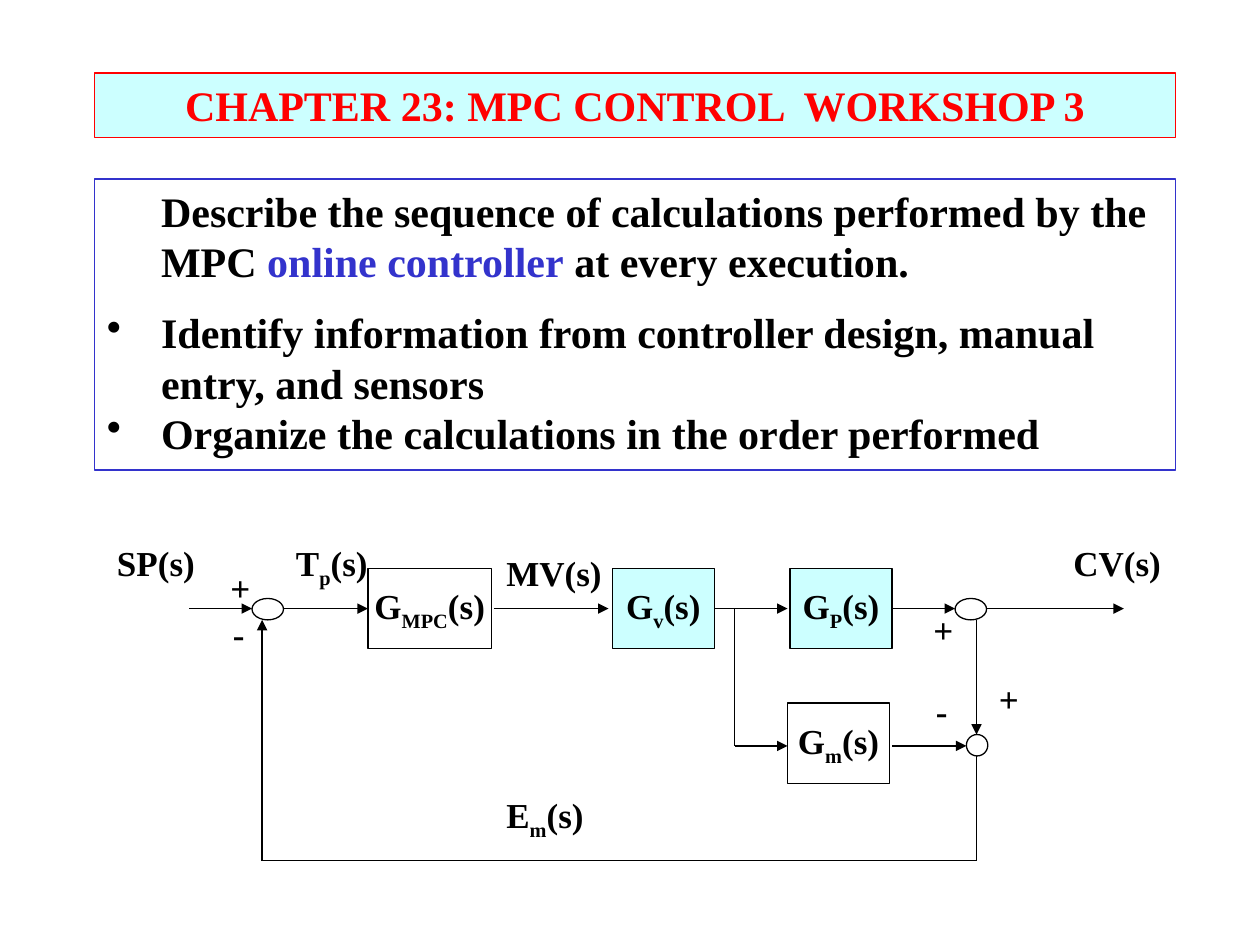
from dataclasses import dataclass
from typing import Optional

from lxml.etree import SubElement
from pptx import Presentation
from pptx.dml.color import RGBColor
from pptx.enum.shapes import MSO_CONNECTOR as Link, MSO_SHAPE as Kind
from pptx.enum.text import MSO_ANCHOR as Anchor, PP_ALIGN as Align
from pptx.oxml.ns import qn
from pptx.util import Inches, Pt

BLACK = RGBColor(0x00, 0x00, 0x00)
RED = RGBColor(0xFF, 0x00, 0x00)
BLUE = RGBColor(0x33, 0x33, 0xCC)
CYAN = RGBColor(0xCC, 0xFF, 0xFF)
FONT = "Times New Roman"
LEFT, WIDE = 0.75, 8.58
MAIN, MODEL, BACK = 4.83, 5.92, 6.83  # heights of the three signal rows
HIGH = 0.64


@dataclass
class Block:
    text: str
    x: float
    y: float
    w: float = 0.81
    fill: Optional[RGBColor] = None


@dataclass
class Node:
    x: float
    y: float
    w: float
    h: float = 0.17


@dataclass
class Label:
    text: str
    x: float
    y: float
    w: float
    wrap: bool = True


@dataclass
class Wire:
    x1: float
    y1: float
    x2: float
    y2: float
    arrow: bool = True
    start: Optional[str] = None  # block whose right side it leaves
    stop: Optional[str] = None   # block whose left side it enters


BLOCKS = [
    Block("G_MPC_(s)", 2.92, MAIN - HIGH / 2, 0.98),
    Block("G_v_(s)", 4.86, MAIN - HIGH / 2, fill=CYAN),
    Block("G_P_(s)", 6.27, MAIN - HIGH / 2, fill=CYAN),
    Block("G_m_(s)", 6.25, 5.58),
]
NODES = [Node(2, 4.75, 0.25), Node(7.58, 4.75, 0.25), Node(7.67, 5.83, 0.17)]
WIRES = [
    Wire(1.5, MAIN, 2, MAIN),
    Wire(2.25, MAIN, 2.92, MAIN, stop="G_MPC_(s)"),
    Wire(3.92, MAIN, 4.83, MAIN),
    Wire(5.67, MAIN, 6.25, MAIN, start="G_v_(s)"),
    Wire(7.08, MAIN, 7.58, MAIN, start="G_P_(s)"),
    Wire(7.83, MAIN, 8.92, MAIN),
    Wire(5.83, MAIN, 5.83, MODEL, arrow=False),
    Wire(5.83, MODEL, 6.25, MODEL),
    Wire(7.08, MODEL, 7.67, MODEL),
    Wire(7.75, 4.92, 7.75, 5.83),
    Wire(7.75, 6, 7.75, BACK, arrow=False),
    Wire(7.75, BACK, 2.08, BACK, arrow=False),
    Wire(2.08, BACK, 2.08, 4.92),
]
LABELS = [
    Label("SP(s)", 0.83, 4.25, 0.92),
    Label("T_p_(s)", 2.25, 4.25, 1.08),
    Label("MV(s)", 3.92, 4.33, 1.08),
    Label("CV(s)", 8.42, 4.25, 0.92),
    Label("E_m_(s)", 3.92, 6.25, 1.08),
    Label("+", 1.73, 4.45, 0.36, False),
    Label("-", 1.75, 4.81, 0.29, False),
    Label("+", 7.31, 4.78, 0.36, False),
    Label("-", 7.33, 5.42, 0.29, False),
    Label("+", 7.83, 5.33, 0.36, False),
]


def style(run, size: int, color: RGBColor = BLACK) -> None:
    font = run.font
    font.name, font.size, font.bold = FONT, Pt(size), True
    font.color.rgb = color


def write(par, text: str) -> None:
    """Write a signal name; the part between underscores is a subscript."""
    for i, part in enumerate(text.split("_")):
        run = par.add_run()
        run.text = part
        style(run, 20)
        if i % 2:
            run.font._element.set("baseline", "-25000")


def paint(shape, fill: Optional[RGBColor], line: RGBColor) -> None:
    if fill is None:
        shape.fill.background()
    else:
        shape.fill.solid()
        shape.fill.fore_color.rgb = fill
    shape.line.color.rgb = line
    shape.line.width = Pt(0.75)


def add_shape(slide, kind, x: float, y: float, w: float, h: float,
              fill: Optional[RGBColor] = None, line: RGBColor = BLACK):
    shape = slide.shapes.add_shape(kind, Inches(x), Inches(y), Inches(w), Inches(h))
    shape.shadow.inherit = False
    paint(shape, fill, line)
    return shape


def add_block(slide, block: Block):
    shape = add_shape(slide, Kind.RECTANGLE, block.x, block.y, block.w, HIGH, block.fill)
    frame = shape.text_frame
    frame.word_wrap = False
    frame.vertical_anchor = Anchor.MIDDLE
    par = frame.paragraphs[0]
    par.alignment = Align.CENTER
    write(par, block.text)
    return shape


def add_label(slide, label: Label) -> None:
    box = slide.shapes.add_textbox(
        Inches(label.x), Inches(label.y), Inches(label.w), Inches(0.43))
    box.text_frame.word_wrap = label.wrap
    write(box.text_frame.paragraphs[0], label.text)


def add_wire(slide, wire: Wire, boxes: dict) -> None:
    ends = [Inches(v) for v in (wire.x1, wire.y1, wire.x2, wire.y2)]
    line = slide.shapes.add_connector(Link.STRAIGHT, *ends)
    if wire.start:
        line.begin_connect(boxes[wire.start], 3)
    if wire.stop:
        line.end_connect(boxes[wire.stop], 1)
    line.line.color.rgb = BLACK
    line.line.width = Pt(0.75)
    if wire.arrow:
        SubElement(line.line._get_or_add_ln(), qn("a:tailEnd"), type="triangle")
    SubElement(line._element.spPr, qn("a:effectLst"))


def add_title(slide) -> None:
    title = slide.shapes.title
    title.left, title.top = Inches(LEFT), Inches(0.58)
    title.width, title.height = Inches(WIDE), Inches(0.51)
    paint(title, CYAN, RED)
    frame = title.text_frame
    frame.text = "CHAPTER 23: MPC CONTROL  WORKSHOP 3"
    frame.vertical_anchor = Anchor.TOP
    frame.paragraphs[0].alignment = Align.CENTER
    style(frame.paragraphs[0].runs[0], 24, RED)


def add_task(slide) -> None:
    shape = add_shape(slide, Kind.RECTANGLE, LEFT, 1.42, WIDE, 2.31, line=BLUE)
    frame = shape.text_frame
    frame.word_wrap = True
    frame.vertical_anchor = Anchor.TOP
    frame.text = ("\n"
                  "Identify information from controller design, manual entry, and sensors\n"
                  "Organize the calculations in the order performed")
    intro, *points = frame.paragraphs
    for text in ("Describe the sequence of calculations performed by the MPC ",
                 "online controller", " at every execution."):
        intro.add_run().text = text
    for par in frame.paragraphs:
        par.alignment = Align.LEFT
        par._p.get_or_add_pPr().set("marL", str(Inches(0.43)))
        for run in par.runs:
            style(run, 24)
    intro.runs[1].font.color.rgb = BLUE
    points[0].space_before = Pt(12)
    for par in points:
        props = par._p.get_or_add_pPr()
        props.set("indent", str(-Inches(0.43)))
        SubElement(props, qn("a:buChar"), char="•")


def main() -> None:
    deck = Presentation()
    deck.slide_width, deck.slide_height = Inches(10), Inches(7.5)
    slide = deck.slides.add_slide(deck.slide_layouts[5])
    add_title(slide)
    add_task(slide)
    boxes = {block.text: add_block(slide, block) for block in BLOCKS}
    for node in NODES:
        add_shape(slide, Kind.OVAL, node.x, node.y, node.w, node.h)
    for wire in WIRES:
        add_wire(slide, wire, boxes)
    for label in LABELS:
        add_label(slide, label)
    deck.save("out.pptx")


if __name__ == "__main__":
    main()
